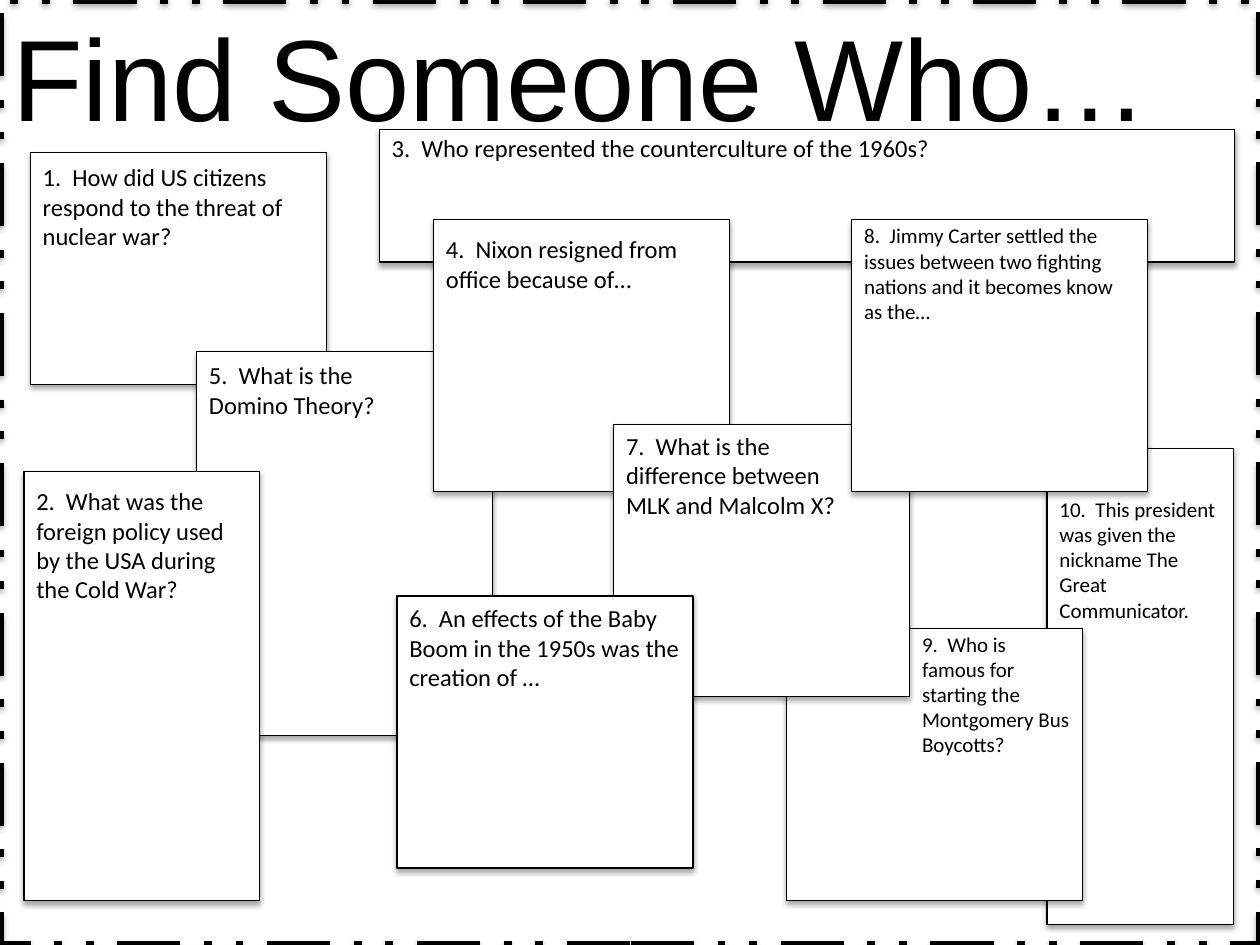
"""Build the "Find Someone Who…" review worksheet slide."""
from lxml.etree import SubElement
from pptx import Presentation
from pptx.dml.color import RGBColor
from pptx.enum.dml import MSO_LINE
from pptx.enum.shapes import MSO_SHAPE as Shape
from pptx.enum.text import MSO_AUTO_SIZE as AutoSize
from pptx.oxml.ns import qn
from pptx.util import Inches, Pt

BLACK = RGBColor(0, 0, 0)
WHITE = RGBColor(255, 255, 255)

CARDS = [
    (0.24, 1.21, 2.35, 1.84),
    (1.56, 2.79, 2.35, 3.05),
    (3.01, 1.03, 6.79, 1.05),
    (3.44, 1.74, 2.35, 2.16),
    (8.31, 3.56, 1.48, 3.78),
    (6.24, 4.99, 2.35, 2.16),
    (4.87, 3.37, 2.35, 2.16),
    (3.15, 4.73, 2.35, 2.16),
    (0.19, 3.74, 1.87, 3.41),
    (6.76, 1.74, 2.35, 2.16),
]

QUESTIONS = [
    ("1.  How did US citizens respond to the threat of nuclear war?", (0.24, 1.24, 2.35, 0.81), 14),
    ("2.  What was the foreign policy used by the USA during the Cold War?", (0.19, 3.81, 1.87, 1.04), 14),
    ("3.  Who represented the counterculture of the 1960s?", (3.01, 1.01, 6.79, 0.34), 14),
    ("4.  Nixon resigned from office because of…", (3.44, 1.81, 2.35, 0.57), 14),
    ("5.  What is the Domino Theory?", (1.56, 2.81, 1.89, 0.57), 14),
    ("6.  An effects of the Baby Boom in the 1950s was the creation of …", (3.15, 4.74, 2.35, 0.81), 14),
    ("7.  What is the difference between MLK and Malcolm X?", (4.87, 3.37, 1.89, 0.81), 14),
    ("8.  Jimmy Carter settled the issues between two fighting nations and it becomes know as the…",
     (6.76, 1.72, 2.35, 0.91), 12),
    ("9.  Who is famous for starting the Montgomery Bus Boycotts?", (7.22, 4.96, 1.37, 1.11), 12),
    ("10.  This president was given the nickname The Great Communicator.", (8.31, 3.89, 1.48, 1.11), 12),
]


def write_text(frame, text, *, size, font="Calibri", color=BLACK):
    span = frame.paragraphs[0].add_run()
    span.text = text
    span.font.name = font
    span.font.size = Pt(size)
    span.font.color.rgb = color


class Worksheet:
    def __init__(self, page):
        self.page = page

    def soft_shadow(self, shape):
        shape.shadow.inherit = False
        effects = shape._element.spPr.find(qn("a:effectLst"))
        shadow = SubElement(effects, qn("a:outerShdw"), blurRad=str(Pt(3.1)),
                            dist=str(Pt(1.8)), dir="5400000", rotWithShape="0")
        color = SubElement(shadow, qn("a:srgbClr"), val=str(BLACK))
        SubElement(color, qn("a:alpha"), val="35000")

    def rectangle(self, place, *, fill=WHITE, width=0.75, dash=None):
        shape = self.page.shapes.add_shape(Shape.RECTANGLE, *map(Inches, place))
        if fill is None:
            shape.fill.background()
        else:
            shape.fill.solid()
            shape.fill.fore_color.rgb = fill
        shape.line.color.rgb = BLACK
        shape.line.width = Pt(width)
        if dash is not None:
            shape.line.dash_style = dash
        self.soft_shadow(shape)

    def label(self, text, place, **style):
        box = self.page.shapes.add_textbox(*map(Inches, place))
        box.text_frame.word_wrap = True
        box.text_frame.auto_size = AutoSize.SHAPE_TO_FIT_TEXT
        write_text(box.text_frame, text, **style)


def main():
    deck = Presentation()
    deck.slide_width, deck.slide_height = Inches(10), Inches(7.5)
    sheet = Worksheet(deck.slides.add_slide(deck.slide_layouts[6]))

    sheet.rectangle((0, 0, 10, 7.5), fill=None, width=4.5, dash=MSO_LINE.DASH_DOT_DOT)
    sheet.label("Find Someone Who…", (0, 0, 9.43, 1.21), size=66, font="Arial")
    for place in CARDS:
        sheet.rectangle(place)
    for text, place, size in QUESTIONS:
        sheet.label(text, place, size=size)

    deck.save("out.pptx")


if __name__ == "__main__":
    main()
